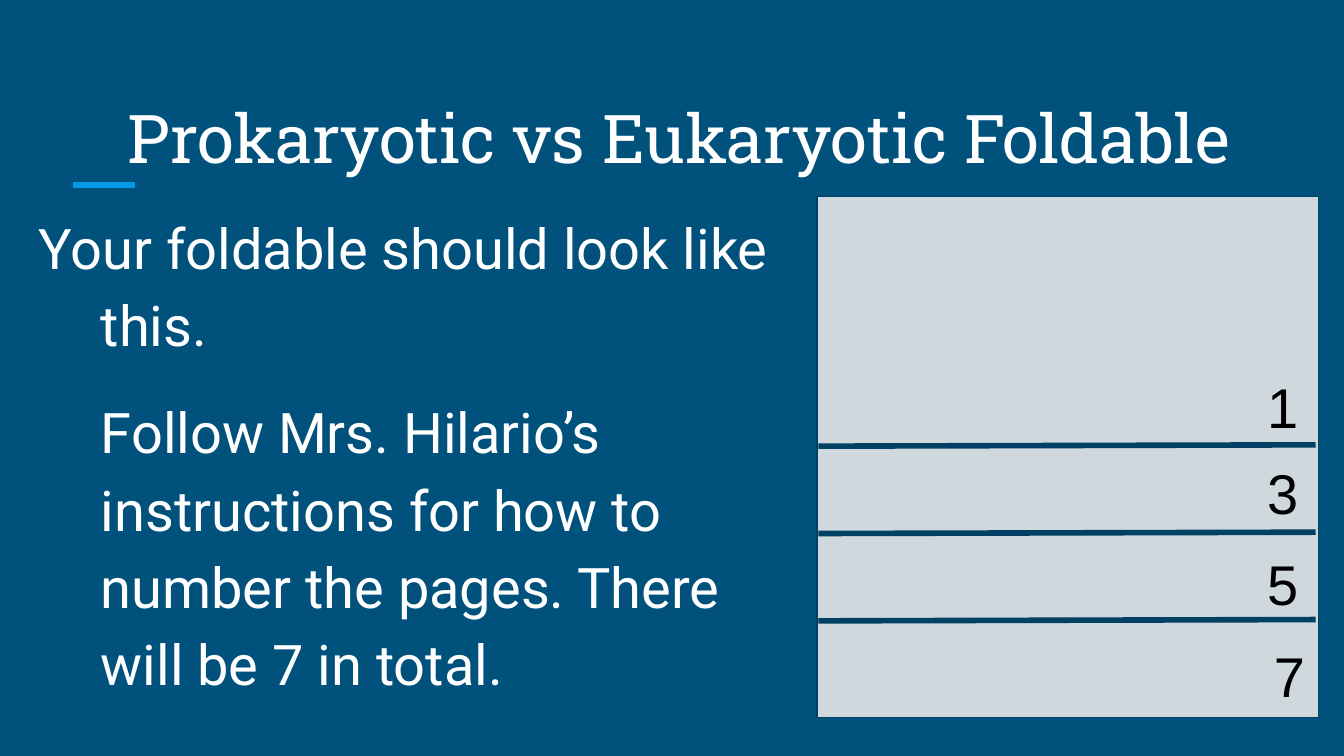
import dataclasses

import pptx
import pptx.dml.color
import pptx.enum.shapes
import pptx.enum.text
import pptx.oxml
import pptx.oxml.ns
import pptx.util

# Grid of square cells covering the 16:9 slide
COLUMNS, ROWS = 100, 56.25
CELL = pptx.util.Inches(0.1)


@dataclasses.dataclass(frozen=True)
class Theme:
    background: str = "00517C"
    accent: str = "039BE5"
    paper: str = "CFD8DC"
    fold: str = "004065"
    light: str = "FFFFFF"
    dark: str = "000000"
    title_font: str = "Roboto Slab"
    body_font: str = "Roboto"
    number_font: str = "Arial"
    title_size: int = 36
    text_size: int = 30
    thick: float = 3
    thin: float = 0.75


@dataclasses.dataclass(frozen=True)
class Box:
    """A region measured in grid cells."""
    left: float
    top: float
    width: float
    height: float

    def inner(self, left, top, width, height):
        return Box(self.left + left, self.top + top, width, height)

    def lengths(self):
        return [round(n * CELL) for n in (self.left, self.top, self.width, self.height)]


THEME = Theme()


def rgb(value):
    return pptx.dml.color.RGBColor.from_string(value)


def apply(target, values):
    for name, value in values.items():
        setattr(target, name, value)


def place(shape, box):
    apply(shape, dict(zip(("left", "top", "width", "height"), box.lengths())))


def format_frame(frame, anchor):
    inset = CELL
    apply(frame, {
        "word_wrap": True, "auto_size": pptx.enum.text.MSO_AUTO_SIZE.NONE,
        "vertical_anchor": anchor, "margin_left": inset, "margin_right": inset,
        "margin_top": inset, "margin_bottom": inset,
    })


def add_text(paragraph, text, font, size, color):
    run = paragraph.add_run()
    run.text = text
    apply(run.font, {"name": font, "size": pptx.util.Pt(size)})
    run.font.color.rgb = rgb(color)


def add_line(slide, box, color):
    """Draw a line from the box's lower left to its upper right corner."""
    left, top, width, height = box.lengths()
    line = slide.shapes.add_connector(
        pptx.enum.shapes.MSO_CONNECTOR.STRAIGHT, left, top + height, left + width, top)
    line.line.color.rgb = rgb(color)
    line.line.width = pptx.util.Pt(THEME.thick)
    properties = line._element.spPr
    properties.append(properties.makeelement(pptx.oxml.ns.qn("a:effectLst"), {}))


def add_title(slide, box, text):
    # Accent dash under the title's left end
    add_line(slide, box.inner(0.6, 12.75, 4.65, 0), THEME.accent)
    title = slide.shapes.title
    place(title, box)
    format_frame(title.text_frame, pptx.enum.text.MSO_ANCHOR.BOTTOM)
    paragraph = title.text_frame.paragraphs[0]
    paragraph.alignment = pptx.enum.text.PP_ALIGN.CENTER
    add_text(paragraph, text, THEME.title_font, THEME.title_size, THEME.light)


def add_instructions(slide, box, items):
    """Fill the body with (text, first-line indent in cells) items."""
    body = slide.placeholders[1]
    place(body, box)
    frame = body.text_frame
    format_frame(frame, pptx.enum.text.MSO_ANCHOR.TOP)
    for index, (text, indent) in enumerate(items):
        paragraph = frame.add_paragraph() if index else frame.paragraphs[0]
        apply(paragraph, {
            "alignment": pptx.enum.text.PP_ALIGN.LEFT, "line_spacing": 1.15,
            "space_before": pptx.util.Pt(0), "space_after": pptx.util.Pt(16),
        })
        add_text(paragraph, text, THEME.body_font, THEME.text_size, THEME.light)
        # Indent without a bullet
        properties = paragraph._p.get_or_add_pPr()
        properties.set("marL", str(5 * CELL))
        properties.set("indent", str(round(indent * CELL)))
        properties.append(properties.makeelement(pptx.oxml.ns.qn("a:buNone"), {}))


def add_foldable(slide, box, pages):
    """Draw the paper, its folds and the (number, left, top) page labels."""
    paper = slide.shapes.add_shape(
        pptx.enum.shapes.MSO_SHAPE.RECTANGLE, *box.lengths())
    paper.shadow.inherit = False
    paper.fill.solid()
    paper.fill.fore_color.rgb = rgb(THEME.paper)
    paper.line.color.rgb = rgb(THEME.fold)
    paper.line.width = pptx.util.Pt(THEME.thin)

    # Equally spaced folds, each rising slightly to the right
    for fold in range(len(pages) - 1):
        add_line(slide, box.inner(0.1, 18.5 + 6.5 * fold, 37, 0.1), THEME.fold)

    # Page numbers
    for number, left, top in pages:
        label = slide.shapes.add_textbox(*box.inner(left, top, 3.6, 5.9).lengths())
        format_frame(label.text_frame, pptx.enum.text.MSO_ANCHOR.TOP)
        add_text(label.text_frame.paragraphs[0], number,
                 THEME.number_font, THEME.text_size, THEME.dark)


def main():
    presentation = pptx.Presentation()
    presentation.slide_width = round(COLUMNS * CELL)
    presentation.slide_height = round(ROWS * CELL)
    slide = presentation.slides.add_slide(presentation.slide_layouts[1])
    slide.background.fill.solid()
    slide.background.fill.fore_color.rgb = rgb(THEME.background)

    add_title(slide, Box(4.8, 1, 91.5, 13.15), "Prokaryotic vs Eukaryotic Foldable")
    add_instructions(slide, Box(1.5, 14.15, 58.1, 33.7), [
        ("Your foldable should look like this.", -4.6),
        ("Follow Mrs. Hilario’s instructions for how to number the pages. "
         "There will be 7 in total.", 0),
    ])
    add_foldable(slide, Box(60.8, 14.6, 37.3, 38.8), [
        ("1", 32.5, 12.1), ("3", 32.5, 18.5), ("5", 32.5, 25.3), ("7", 33, 32.1),
    ])
    presentation.save("out.pptx")


if __name__ == "__main__":
    main()
